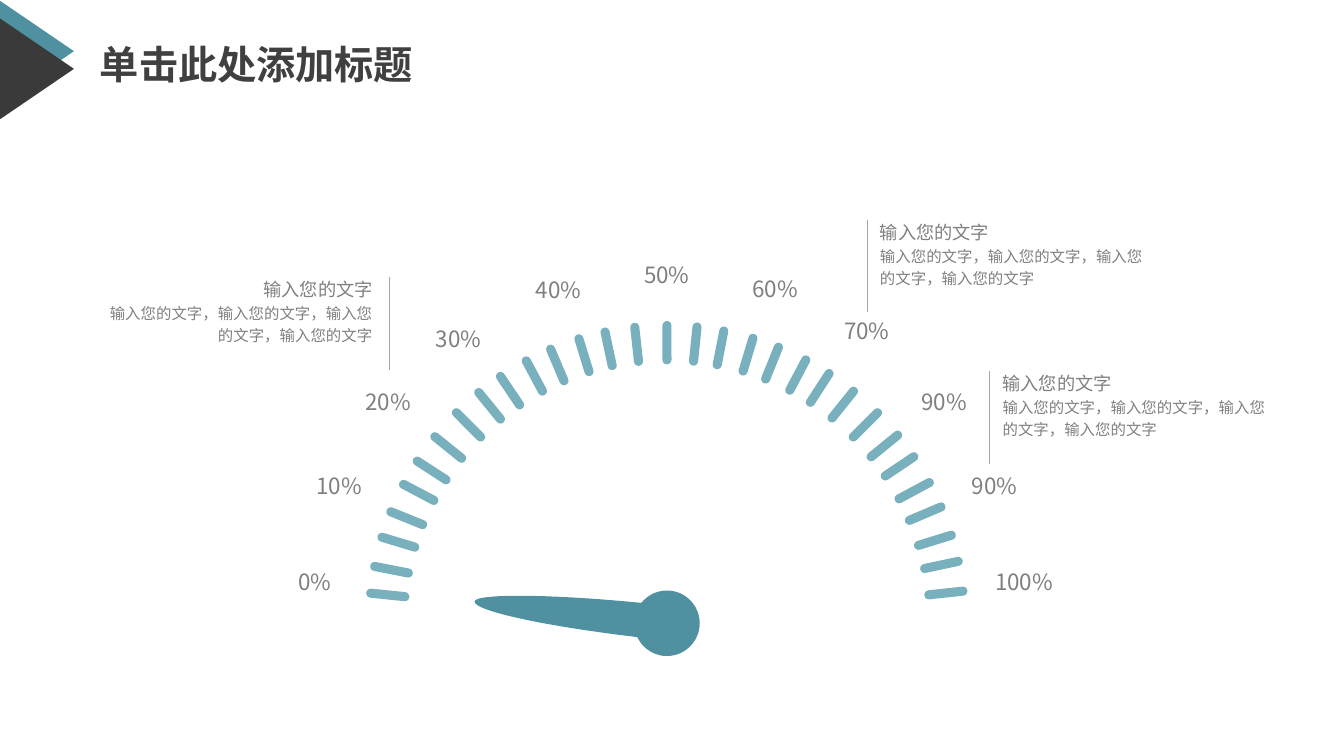
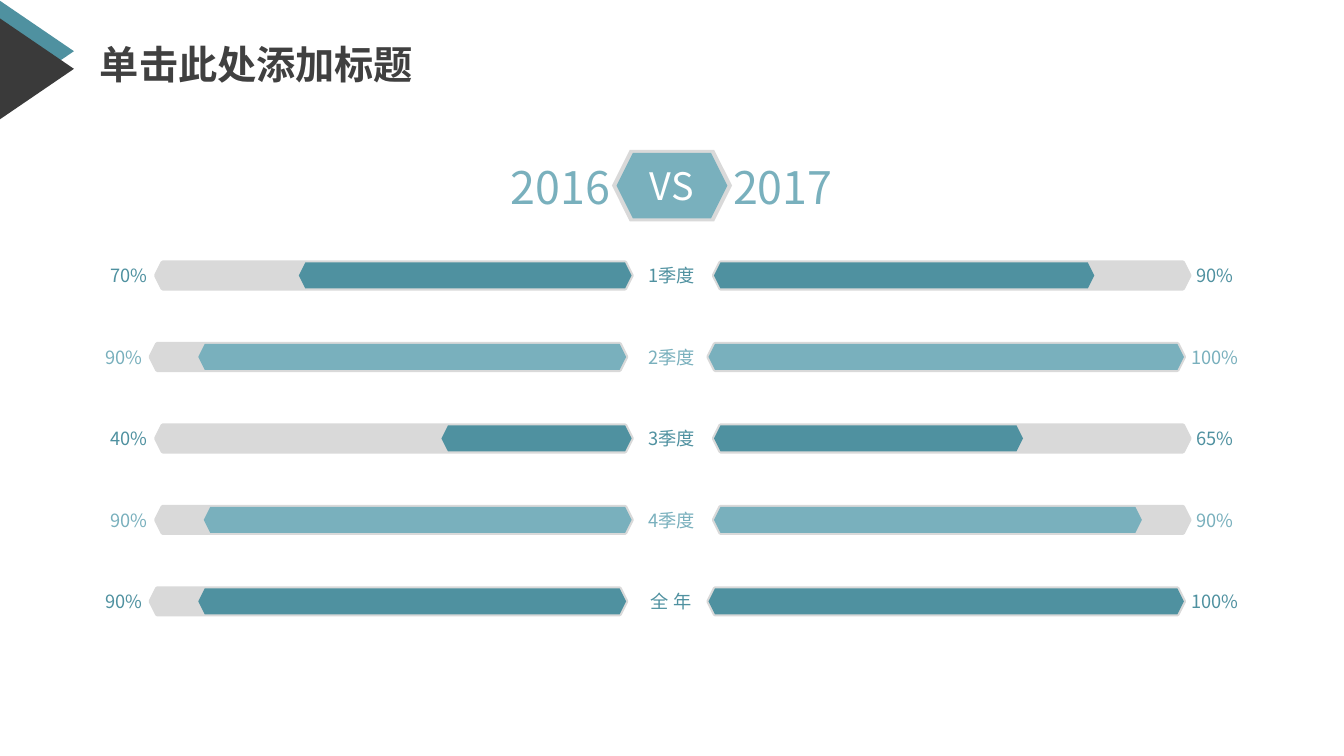
from dataclasses import dataclass
from math import cos, radians, sin

from lxml.etree import SubElement
from pptx import Presentation
from pptx.dml.color import RGBColor
from pptx.enum.shapes import MSO_CONNECTOR, MSO_SHAPE
from pptx.enum.text import MSO_ANCHOR, PP_ALIGN
from pptx.oxml.ns import qn
from pptx.util import Emu, Inches, Pt


@dataclass(frozen=True)
class Theme:
    teal: str = "4F91A0"
    light: str = "79B0BD"
    dark: str = "3A3A3A"
    heading: str = "404040"
    body: str = "808080"
    track: str = "D9D9D9"
    rule: str = "A6A6A6"
    white: str = "FFFFFF"
    font: str = "Noto Sans CJK SC"
    title_font: str = "Arial"
    title: int = 28
    year: int = 32
    versus: int = 27
    scale: int = 16
    label: int = 13
    small: int = 11


T = Theme()
COLS, ROWS = 160, 90  # square cells, twelve to the inch
TITLE = "单击此处添加标题"
PAD = (1.56, 0.8)


def cells(n):
    return Emu(round(n * Inches(1) / 12))


def rgb(value):
    return RGBColor.from_string(value)


# ---- building blocks ----
def text(shape, *lines, size=T.label, color=T.body, font=T.font, bold=None,
         align=PP_ALIGN.LEFT, anchor=MSO_ANCHOR.MIDDLE, wrap=True,
         spacing=None, pad=None):
    """Fill a shape with lines; a line is a string or a (string, size) pair."""
    tf = shape.text_frame
    tf.word_wrap, tf.vertical_anchor = wrap, anchor
    if pad is not None:
        tf.margin_left = tf.margin_right = cells(pad[0])
        tf.margin_top = tf.margin_bottom = cells(pad[1])
    for i, line in enumerate(lines):
        words, points = line if isinstance(line, tuple) else (line, size)
        p = tf.add_paragraph() if i else tf.paragraphs[0]
        p.alignment, p.line_spacing = align, spacing
        r = p.add_run()
        r.text = words
        r.font.size, r.font.bold, r.font.name = Pt(points), bold, font
        r.font.color.rgb = rgb(color)
        SubElement(r._r.get_or_add_rPr(), qn("a:ea"), typeface=T.font)


def text_box(s, x, y, w, h, *lines, **fmt):
    text(s.shapes.add_textbox(*map(cells, (x, y, w, h))), *lines, **fmt)


def paint(sp, fill, border=None):
    sp.shadow.inherit = False
    sp.fill.solid()
    sp.fill.fore_color.rgb = rgb(fill)
    if border:
        sp.line.color.rgb, sp.line.width = rgb(fill), Pt(border)
    else:
        sp.line.fill.background()
    return sp


def shape(s, kind, x, y, w, h, fill, border=None):
    return paint(s.shapes.add_shape(kind, *map(cells, (x, y, w, h))),
                 fill, border)


def outline(s, points, fill):
    start, *rest = [(cells(x), cells(y)) for x, y in points]
    builder = s.shapes.build_freeform(*start)
    builder.add_line_segments(rest, close=True)
    return paint(builder.convert_to_shape(), fill)


def bezier(a, b, c, d, steps=16):
    for i in range(steps + 1):
        t = i / steps
        weights = ((1 - t) ** 3, 3 * t * (1 - t) ** 2, 3 * t * t * (1 - t), t ** 3)
        yield tuple(sum(k * pt[axis] for k, pt in zip(weights, (a, b, c, d)))
                    for axis in (0, 1))


# ---- shared frame ----
def add_slide(prs, layout):
    s = prs.slides.add_slide(layout)
    text(s.shapes.title, TITLE, size=T.title, color=T.heading,
         font=T.title_font, bold=True, spacing=0.9)
    return s


def dress_layout(layout, s):
    """Place the title and move the corner arrows from s to the layout."""
    title = layout.placeholders[0]
    title.left, title.top, title.width, title.height = map(
        cells, (10.7, 4.1, 63.4, 7.8))
    for top, fill in ((0.1, T.teal), (2.2, T.dark)):
        arrow = outline(s, [(0, top), (8.8, top + 6), (0, top + 12)], fill)
        layout.shapes.element.append(arrow.element)


# ---- gauge slide ----
SCALE = [("0%", -41.9, -5), ("10%", -39, -16.4), ("20%", -33.2, -26.4),
         ("30%", -24.8, -33.9), ("40%", -12.9, -39.7), ("50%", 0, -41.5),
         ("60%", 12.9, -39.8), ("70%", 23.8, -34.9), ("90%", 33, -26.4),
         ("90%", 39, -16.4), ("100%", 42.5, -5)]
NEEDLE = [(-1.3, 1.9), (-13.3, 0.6), (-23, -1.4), (-22.9, -2.6),
          (-22.8, -3.6), (-12.9, -3.5), (-0.8, -2.2)]


def gauge(s, cx, cy, radius=33.4):
    # ticks: two quarters, each with main and offset steps
    w, h = 1.08, 5.16
    for quarter in (-90, 0):
        for step in (0, 11, 22, 33, 45, 56, 67, 78):
            for offset in (0, 5.8):
                angle = quarter + step + offset
                if angle == -90:
                    continue
                x = cx + radius * sin(radians(angle))
                y = cy - radius * cos(radians(angle))
                tick = shape(s, MSO_SHAPE.ROUNDED_RECTANGLE,
                             x - w / 2, y - h / 2, w, h, T.light)
                tick.adjustments[0] = 0.5
                tick.rotation = angle
    # scale labels
    w, h = 12.7, 4.4
    for label, dx, dy in SCALE:
        text_box(s, cx + dx - w / 2, cy + dy - h / 2, w, h, label,
                 size=T.scale, align=PP_ALIGN.CENTER)
    # needle and hub
    curve = [*bezier(*NEEDLE[:4]), *bezier(*NEEDLE[3:])]
    outline(s, [(cx + x, cy + y) for x, y in curve], T.teal)
    shape(s, MSO_SHAPE.OVAL, cx - 3.9, cy - 3.9, 7.8, 7.8, T.teal)


def callout(s, x, y, align=PP_ALIGN.LEFT):
    rule = s.shapes.add_connector(MSO_CONNECTOR.STRAIGHT,
                                  *map(cells, (x, y + 11, x, y)))
    rule.line.color.rgb, rule.line.width = rgb(T.rule), Pt(0.5)
    SubElement(rule.element.spPr, qn("a:effectLst"))
    w = 35.9
    left = x if align == PP_ALIGN.LEFT else x - w - 0.4
    phrase = "输入您的文字"
    text_box(s, left, y - 1.2, w, 10, phrase,
             ("，".join([phrase] * 4), T.small), align=align,
             anchor=MSO_ANCHOR.TOP, spacing=1.2, pad=PAD)


def gauge_slide(s):
    gauge(s, COLS / 2 - 0.6, 74.2)
    callout(s, 103.2, 26.2)
    callout(s, 46.3, 33, PP_ALIGN.RIGHT)
    callout(s, 117.8, 44.2)


# ---- comparison slide ----
# label, left value, right value, share of the right bar
QUARTERS = [("1季度", 70, 90, 80), ("2季度", 90, 100, 100),
            ("3季度", 40, 65, 65), ("4季度", 90, 90, 90),
            ("全 年", 90, 100, 100)]


def versus_header(s, cx, cy):
    for w, h, fill in ((14.3, 8.5, T.track), (13.2, 7.8, T.light)):
        badge = shape(s, MSO_SHAPE.HEXAGON, cx - w / 2, cy - h / 2, w, h, fill)
    text(badge, "VS", size=T.versus, color=T.white, align=PP_ALIGN.CENTER,
         wrap=False, pad=(0, 0))
    for year, dx in (("2016", -13.3), ("2017", 13.2)):
        text_box(s, cx + dx - 7.9, cy - 3.9, 15.8, 8, year, size=T.year,
                 color=T.light, align=PP_ALIGN.CENTER, wrap=False, pad=PAD)


def bar(s, x, cy, length, share, color, from_right=False):
    h = 3.1
    filled = length * share / 100
    start = x + length - filled if from_right else x
    shape(s, MSO_SHAPE.HEXAGON, x, cy - h / 2, length, h, T.track, border=3)
    shape(s, MSO_SHAPE.HEXAGON, start, cy - h / 2, filled, h, color)


def comparison_row(s, cx, cy, label, left, right, right_share, color):
    length, label_w, value_w, h = 56.6, 8.8, 9.1, 4.3
    y = cy - h / 2
    text_box(s, cx - label_w / 2, y, label_w, h, label, color=color,
             align=PP_ALIGN.CENTER, pad=PAD)
    # a three-digit value moves both bars left
    mid = cx + 0.2 - (0.65 if right == 100 else 0)
    left_x, right_x = mid - 4.9 - length, mid + 4.9
    bar(s, left_x, cy, length, left, color, from_right=True)
    bar(s, right_x, cy, length, right_share, color)
    text_box(s, left_x + 0.5 - value_w, y, value_w, h, f"{left}%", color=color,
             align=PP_ALIGN.RIGHT, pad=PAD)
    text_box(s, right_x + length - 0.7, y, value_w, h, f"{right}%",
             color=color, wrap=False, pad=PAD)


def comparison_slide(s):
    versus_header(s, COLS / 2, 22.1)
    for i, row in enumerate(QUARTERS):
        comparison_row(s, COLS / 2 - 0.1, 32.8 + 9.7 * i, *row,
                       color=(T.teal, T.light)[i % 2])


def main():
    prs = Presentation()
    prs.slide_width, prs.slide_height = cells(COLS), cells(ROWS)
    layout = prs.slide_layouts.get_by_name("Title Only")
    first, second = add_slide(prs, layout), add_slide(prs, layout)
    dress_layout(layout, first)
    gauge_slide(first)
    comparison_slide(second)
    prs.save("out.pptx")


if __name__ == "__main__":
    main()
